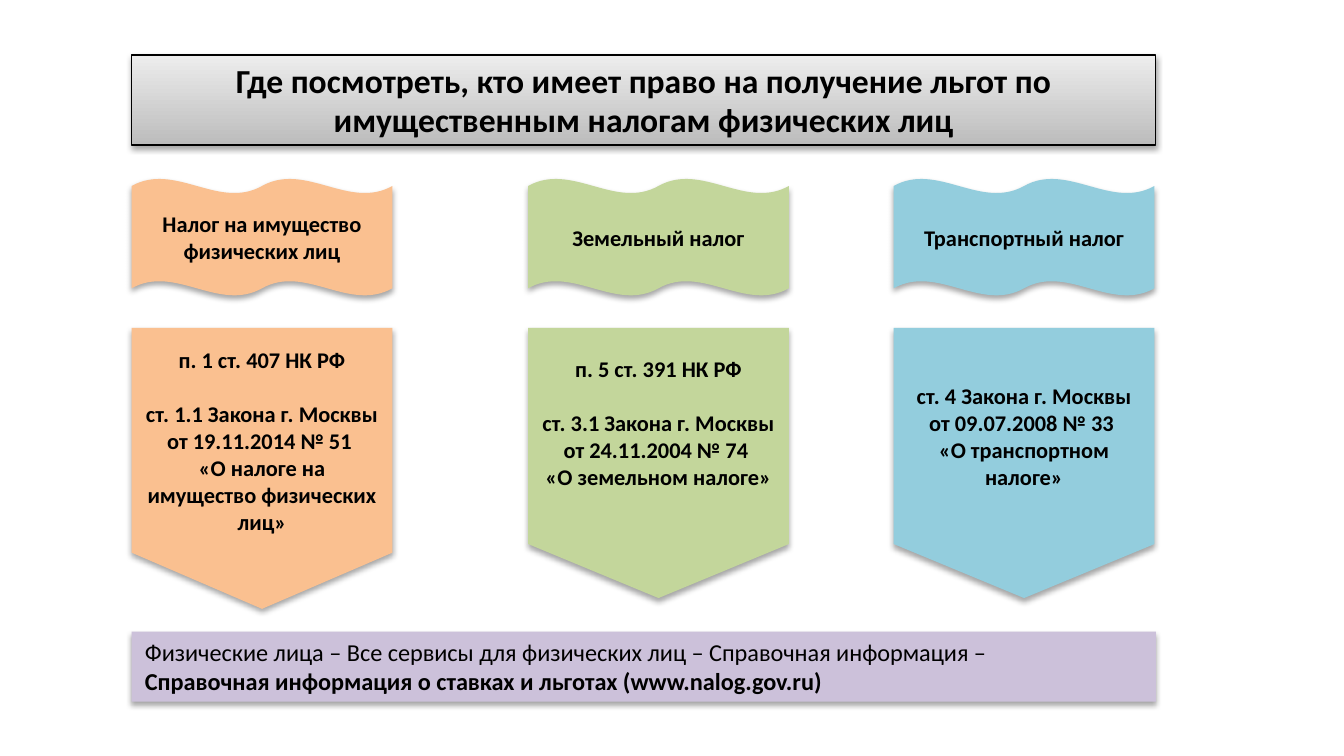
from lxml.etree import SubElement
from pptx import Presentation
from pptx.dml.color import RGBColor
from pptx.enum.shapes import MSO_SHAPE as SHAPE
from pptx.enum.text import MSO_ANCHOR as ANCHOR, MSO_AUTO_SIZE as AUTO, PP_ALIGN as ALIGN
from pptx.oxml.ns import qn
from pptx.util import Inches, Pt

W = 10
H = W * 9 / 16
LEFT, WIDTH = 0.98, 7.62
COL_W = 1.94
FLAG_H, ARROW_Y = 0.87, 1.11
BLANK_LINE = 14.65

# left edge, colour, arrow height, bottom inset, tax name, [(law line, space before)]
TAXES = [
    (LEFT, "FAC090", 2.09, 0.05, "Налог на имущество физических лиц",
     [("п. 1 ст. 407 НК РФ", 0),
      ("ст. 1.1 Закона г. Москвы ", BLANK_LINE),
      ("от 19.11.2014 № 51 ", 0),
      ("«О налоге на имущество физических лиц»", 0)]),
    (3.93, "C3D69B", 2.01, 0.25, "Земельный налог",
     [("п. 5 ст. 391 НК РФ", 0),
      ("ст. 3.1 Закона г. Москвы от 24.11.2004 № 74 ", BLANK_LINE),
      ("«О земельном налоге»", 0)]),
    (6.65, "93CDDD", 2.01, 0.05, "Транспортный налог",
     [("ст. 4 Закона г. Москвы от 09.07.2008 № 33 ", 0),
      ("«О транспортном налоге»", 0)]),
]


def rgb(color):
    return RGBColor.from_string(color)


def cast_shadow(sp):
    sp.shadow.inherit = False
    effects = sp._element.spPr.find(qn("a:effectLst"))
    outer = SubElement(effects, qn("a:outerShdw"), blurRad=str(Pt(3.1)), dist=str(Pt(1.8)),
                       dir="5400000", rotWithShape="0")
    color = SubElement(outer, qn("a:srgbClr"), val="000000")
    SubElement(color, qn("a:alpha"), val="35000")


def write(sp, lines, size, align=ALIGN.CENTER, bottom=0.05):
    """Fill a shape with (text, bold, space before) lines."""
    tf = sp.text_frame
    tf.word_wrap = True
    tf.auto_size = AUTO.NONE
    tf.vertical_anchor = ANCHOR.MIDDLE
    tf.margin_left = tf.margin_right = Inches(0.1)
    tf.margin_top, tf.margin_bottom = Inches(0.05), Inches(bottom)
    for i, (text, bold, before) in enumerate(lines):
        p = tf.add_paragraph() if i else tf.paragraphs[0]
        p.alignment = align
        if before:
            p.space_before = Pt(before)
        r = p.add_run()
        r.text = text
        r.font.name, r.font.size, r.font.bold = "Calibri", Pt(size), bold
        r.font.color.rgb = rgb("000000")


def add_panel(s, kind, box, color):
    sp = s.shapes.add_shape(kind, *map(Inches, box))
    sp.fill.solid()
    sp.fill.fore_color.rgb = rgb(color)
    sp.line.fill.background()
    cast_shadow(sp)
    return sp


def place_title(s, box):
    sp = s.shapes.title
    sp.left, sp.top, sp.width, sp.height = map(Inches, box)
    sp.fill.gradient()
    sp.fill.gradient_angle = 270
    for stop, color in zip(sp.fill.gradient_stops, ("EDEDED", "BCBCBC")):
        stop.color.rgb = rgb(color)
    sp.line.color.rgb = rgb("000000")
    sp.line.width = Pt(0.75)
    cast_shadow(sp)
    write(sp, [("Где посмотреть, кто имеет право на получение льгот "
                "по имущественным налогам физических лиц", True, 0)], 18)
    sp.text_frame.paragraphs[0].line_spacing = Pt(21)


def add_tax_column(s, box, color, bottom, name, laws):
    """A wavy flag with the tax name above an arrow with the laws."""
    x, y, w, h = box
    flag = add_panel(s, SHAPE.DOUBLE_WAVE, (x, y, w, FLAG_H), color)
    write(flag, [(name, True, 0)], 12)
    arrow = add_panel(s, SHAPE.FLOWCHART_OFFPAGE_CONNECTOR,
                      (x, y + ARROW_Y, w, h - ARROW_Y), color)
    write(arrow, [(text, True, before) for text, before in laws], 12, bottom=bottom)


def add_source_bar(s, box):
    sp = add_panel(s, SHAPE.RECTANGLE, box, "CCC1DA")
    write(sp, [
        ("Физические лица – Все сервисы для физических лиц – Справочная информация –", False, 0),
        ("Справочная информация о ставках и льготах (www.nalog.gov.ru)", True, 0),
    ], 13, ALIGN.LEFT)


def main():
    prs = Presentation()
    prs.slide_width, prs.slide_height = Inches(W), Inches(H)
    s = prs.slides.add_slide(prs.slide_layouts[5])
    place_title(s, (LEFT, 0.41, WIDTH, 0.67))
    for x, color, arrow_h, bottom, name, laws in TAXES:
        add_tax_column(s, (x, 1.33, COL_W, ARROW_Y + arrow_h), color, bottom, name, laws)
    add_source_bar(s, (LEFT, 4.7, WIDTH, 0.52))
    prs.save("out.pptx")


if __name__ == "__main__":
    main()
